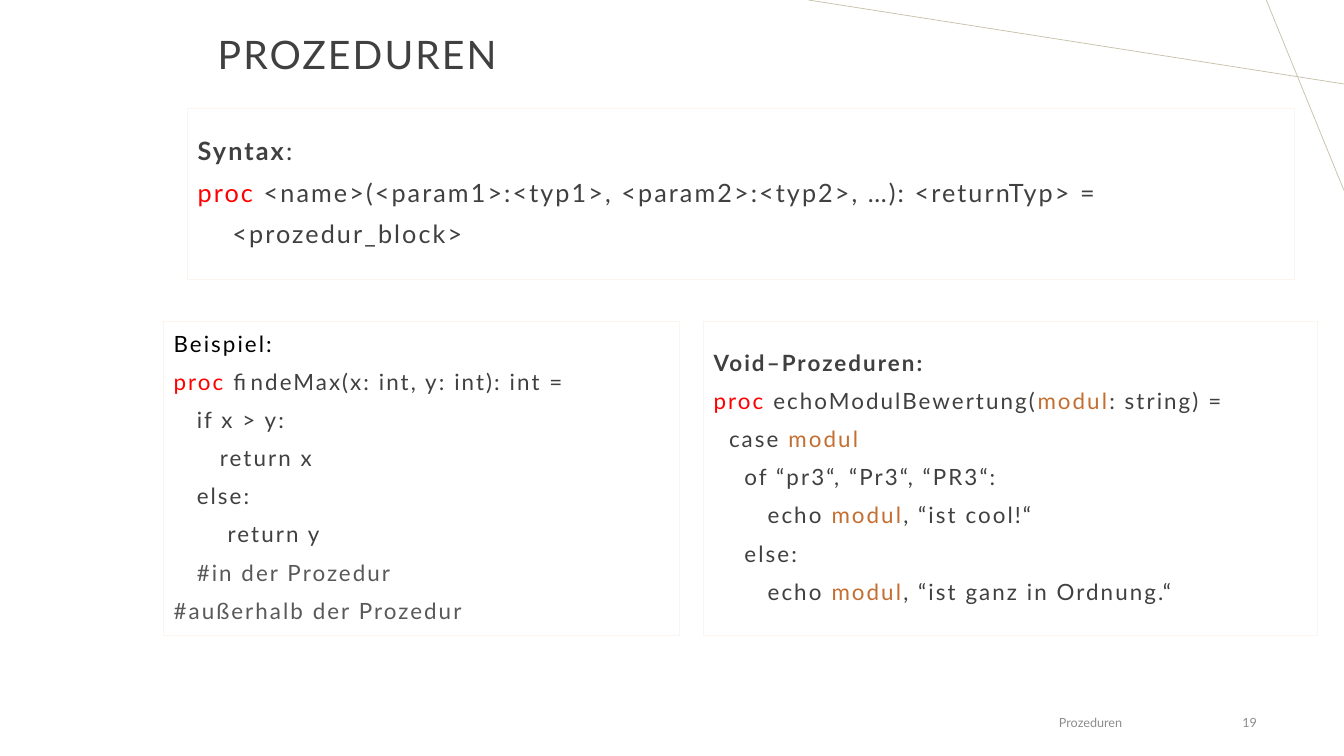
from lxml import etree
from pptx import Presentation
from pptx.dml.color import RGBColor
from pptx.enum.shapes import MSO_CONNECTOR
from pptx.enum.text import MSO_ANCHOR, MSO_AUTO_SIZE, PP_ALIGN
from pptx.oxml.ns import qn
from pptx.util import Pt

LEFT, CENTER, RIGHT = PP_ALIGN.LEFT, PP_ALIGN.CENTER, PP_ALIGN.RIGHT
MIDDLE = MSO_ANCHOR.MIDDLE
NO_FIT = MSO_AUTO_SIZE.NONE
STRAIGHT = MSO_CONNECTOR.STRAIGHT

COLORS = {
    "text": "404040",
    "key": "FF0000",
    "name": "C46E31",
    "note": "595959",
    "head": "000000",
    "foot": "8C8C8C",
    "edge": "FBF4EF",
    "deco": "C6BFA9",
}

# Each line: indent in characters, then runs of (text, colour, bold).
SYNTAX = [
    (0, [("Syntax", "text", True), (":", "text", False)]),
    (0, [("proc", "key", False),
         (" <name>(<param1>:<typ1>, <param2>:<typ2>, …): <returnTyp> =", "text", False)]),
    (4, [("<prozedur_block>", "text", False)]),
]
VOID = [
    (0, [("Void–Prozeduren:", "text", True)]),
    (0, [("proc ", "key", False), ("echoModulBewertung(", "text", False),
         ("modul", "name", False), (": string) =", "text", False)]),
    (2, [("case ", "text", False), ("modul", "name", False)]),
    (4, [("of “pr3“, “Pr3“, “PR3“:", "text", False)]),
    (7, [("echo ", "text", False), ("modul", "name", False),
         (", “ist cool!“", "text", False)]),
    (4, [("else:", "text", False)]),
    (7, [("echo ", "text", False), ("modul", "name", False),
         (", “ist ganz in Ordnung.“", "text", False)]),
]
SAMPLE = [
    (0, [("Beispiel:", "head", False)]),
    (0, [("proc ", "key", False), ("findeMax(x: int, y: int): int =", "text", False)]),
    (3, [("if x > y:", "text", False)]),
    (6, [("return x", "text", False)]),
    (3, [("else:", "text", False)]),
    (7, [("return y", "text", False)]),
    (3, [("#in der Prozedur", "note", False)]),
    (0, [("#außerhalb der Prozedur", "note", False)]),
]


class Page:
    font = "Lato"
    track = 1.5
    step = 0.345  # width of one indent character, as a share of the text size

    def __init__(self, slide):
        self.slide = slide

    def color(self, key):
        return RGBColor.from_string(COLORS[key])

    def place(self, shape, left, top, width, height):
        shape.left, shape.top = Pt(left), Pt(top)
        shape.width, shape.height = Pt(width), Pt(height)
        frame = shape.text_frame
        frame.word_wrap = True
        frame.auto_size = NO_FIT
        frame.vertical_anchor = MIDDLE
        return frame

    def run(self, para, text, size, color, bold=False, track=0):
        run = para.add_run()
        run.text = text
        font = run.font
        font.name, font.size, font.bold = self.font, Pt(size), bold
        font.color.rgb = self.color(color)
        if track:
            run._r.get_or_add_rPr().set("spc", str(round(track * 100)))

    def title(self, text, box, size):
        frame = self.place(self.slide.shapes.title, *box)
        para = frame.paragraphs[0]
        para.alignment, para.line_spacing = CENTER, 0.9
        self.run(para, text, size, "text", track=self.track)

    def code(self, index, lines, box, size):
        """Fill a body placeholder with indented, coloured lines of code."""
        shape = self.slide.placeholders[index]
        frame = self.place(shape, *box)
        shape.fill.background()
        shape.line.color.rgb = self.color("edge")
        shape.line.width = Pt(0.75)
        for i, (indent, runs) in enumerate(lines):
            para = frame.add_paragraph() if i else frame.paragraphs[0]
            para.alignment, para.line_spacing = LEFT, 0.9
            para.space_before, para.space_after = Pt(10), Pt(0)
            props = para._p.get_or_add_pPr()
            props.set("marL", str(Pt(indent * size * self.step)))
            props.set("indent", "0")
            etree.SubElement(props, qn("a:buNone"))
            for text, color, bold in runs:
                self.run(para, text, size, color, bold, self.track)

    def label(self, text, box, align):
        shape = self.slide.shapes.add_textbox(0, 0, 0, 0)
        para = self.place(shape, *box).paragraphs[0]
        para.alignment = align
        self.run(para, text, 9, "foot")

    def line(self, *ends):
        link = self.slide.shapes.add_connector(STRAIGHT, *map(Pt, ends))
        link.line.color.rgb = self.color("deco")
        link.line.width = Pt(0.5)
        etree.SubElement(link._element.spPr, qn("a:effectLst"))

    def prune(self):
        """Remove placeholders left empty."""
        for shape in list(self.slide.placeholders):
            if not shape.text_frame.text:
                shape._element.getparent().remove(shape._element)


def main():
    deck = Presentation()
    deck.slide_width, deck.slide_height = Pt(960), Pt(540)
    page = Page(deck.slides.add_slide(deck.slide_layouts[4]))

    page.line(960, 60, 577.5, 0)
    page.line(904.5, 0, 960, 136)
    page.title("PROZEDUREN", (-76.3, -11.5, 663, 104.4), 28)
    page.code(1, SYNTAX, (134, 77.5, 790.5, 122), 18)
    page.code(2, VOID, (502.5, 229.5, 438.5, 224.5), 16)
    page.code(3, SAMPLE, (116.8, 229.5, 368.6, 224.5), 16)
    page.label("Prozeduren", (617, 502, 324, 28.8), CENTER)
    page.label("19", (689, 502, 216, 28.8), RIGHT)
    page.prune()
    deck.save("out.pptx")


if __name__ == "__main__":
    main()
